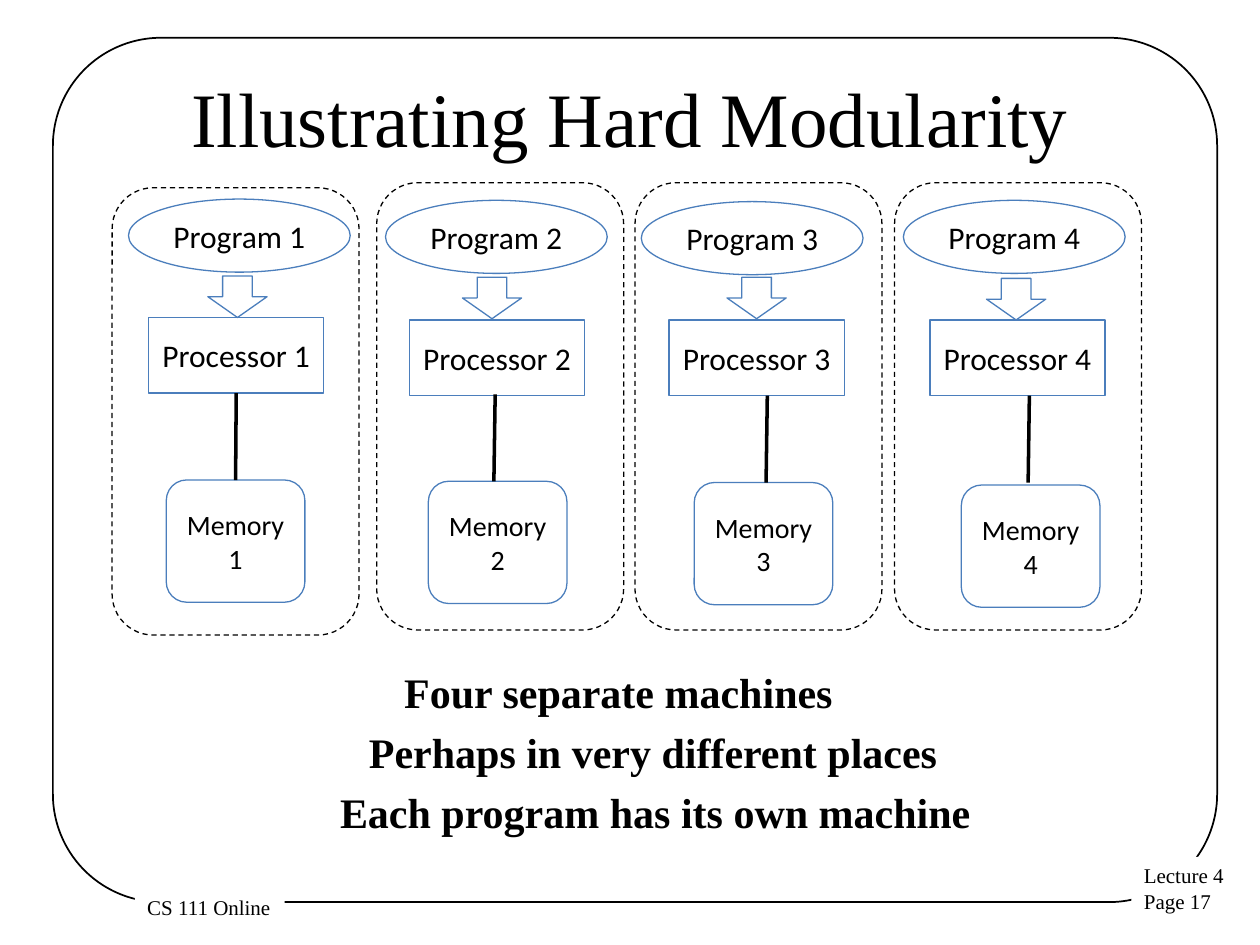
from lxml.etree import SubElement
from pptx import Presentation
from pptx.dml.color import RGBColor
from pptx.enum.dml import MSO_LINE
from pptx.enum.shapes import MSO_CONNECTOR, MSO_SHAPE
from pptx.enum.text import MSO_ANCHOR, MSO_AUTO_SIZE, PP_ALIGN
from pptx.oxml.ns import qn
from pptx.util import Inches, Pt

COLORS = {"ink": "000000", "edge": "4B7EBC", "paper": "FFFFFF"}
SERIF, SANS = "Times New Roman", "Calibri"
COLS, ROWS = 100, 75


def write(frame, text, size=18, font=SANS, bold=False, color="ink",
          align=PP_ALIGN.CENTER, anchor=MSO_ANCHOR.MIDDLE, wrap=True):
    """Fill a text frame, one paragraph for each line of text."""
    frame.word_wrap = wrap
    frame.auto_size = MSO_AUTO_SIZE.NONE if wrap else MSO_AUTO_SIZE.SHAPE_TO_FIT_TEXT
    frame.vertical_anchor = anchor
    for i, line in enumerate(text.split("\n")):
        para = frame.add_paragraph() if i else frame.paragraphs[0]
        para.alignment = align
        run = para.add_run()
        run.text = line
        run.font.size, run.font.name, run.font.bold = Pt(size), font, bold
        run.font.color.rgb = RGBColor.from_string(COLORS[color])


class Deck:
    """Holds the style and the current slide; lengths are grid columns and rows."""

    def __init__(self):
        self.prs = Presentation()
        self.prs.slide_width, self.prs.slide_height = Inches(10), Inches(7.5)
        self.slide = self.prs.slides.add_slide(self.prs.slide_layouts[5])

    def x(self, cols):
        return round(self.prs.slide_width * cols / COLS)

    def y(self, rows):
        return round(self.prs.slide_height * rows / ROWS)

    def area(self, left, top, width, height):
        return self.x(left), self.y(top), self.x(width), self.y(height)

    def title(self, text, *box):
        shape = self.slide.shapes.title
        shape.left, shape.top, shape.width, shape.height = self.area(*box)
        write(shape.text_frame, text, size=44, font=SERIF)

    def shape(self, kind, *box, fill=None, line="edge", weight=0.75,
              dash=None, curve=None):
        shape = self.slide.shapes.add_shape(kind, *self.area(*box))
        shape.shadow.inherit = False
        if fill:
            shape.fill.solid()
            shape.fill.fore_color.rgb = RGBColor.from_string(COLORS[fill])
        else:
            shape.fill.background()
        if line:
            shape.line.color.rgb = RGBColor.from_string(COLORS[line])
            shape.line.width = Pt(weight)
            if dash:
                shape.line.dash_style = dash
        else:
            shape.line.fill.background()
        if curve is not None:
            shape.adjustments[0] = curve
        return shape

    def label(self, text, *box):
        """A white tag that interrupts the frame."""
        tag = self.shape(MSO_SHAPE.RECTANGLE, *box, fill="paper", line=None)
        write(tag.text_frame, text, size=12, font=SERIF, align=PP_ALIGN.LEFT,
              anchor=MSO_ANCHOR.TOP, wrap=False)

    def note(self, text, *box):
        area = self.slide.shapes.add_textbox(*self.area(*box))
        write(area.text_frame, text, size=24, font=SERIF, bold=True,
              align=PP_ALIGN.LEFT, anchor=MSO_ANCHOR.TOP, wrap=False)

    def link(self, left, top, right, bottom):
        line = self.slide.shapes.add_connector(
            MSO_CONNECTOR.STRAIGHT, self.x(left), self.y(top),
            self.x(right), self.y(bottom))
        line.line.color.rgb = RGBColor.from_string(COLORS["ink"])
        line.line.width = Pt(2)
        SubElement(line._element.spPr, qn("a:effectLst"))
        return line


# name, shape, text size, width, height, (left, top) in each machine
PARTS = [
    ("Processor", MSO_SHAPE.RECTANGLE, 18, 13.9, 6,
     [(11.8, 25.2), (32.5, 25.4), (53.1, 25.4), (73.8, 25.4)]),
    ("Program", MSO_SHAPE.OVAL, 18, 17.6, 5.8,
     [(10.2, 15.8), (30.6, 15.9), (50.9, 16), (71.7, 15.9)]),
    ("Memory", MSO_SHAPE.ROUNDED_RECTANGLE, 16, 11, 9.7,
     [(13.2, 38.1), (34, 38.2), (55.1, 38.3), (76.3, 38.5)]),
]
ARROWS = [(16.5, 21.9), (36.7, 22), (57.7, 22), (78.3, 22.1)]
MACHINES = [(8.9, 14.9), (29.9, 14.5), (50.4, 14.5), (71, 14.5)]
WIRES = [(18.8, 31.2), (39.3, 31.3), (60.9, 31.4), (81.7, 31.4)]
NOTES = [("Four separate machines", 31.1, 36.4),
         ("Perhaps in very different places", 28.3, 47.6),
         ("Each program has its own machine", 26, 52.5)]


def main():
    deck = Deck()
    deck.shape(MSO_SHAPE.ROUNDED_RECTANGLE, 4.2, 3, 92.4, 68.6,
               line="ink", weight=1, curve=0.125)
    deck.label("Lecture 4\nPage 17", 89.8, 68, 8.5, 5.1)
    deck.label("CS 111 Online", 10.7, 70.5, 11.9, 3)
    deck.title("Illustrating Hard Modularity", 5, 3, 90, 12.5)

    parts = {}
    for name, kind, size, width, height, spots in PARTS:
        for num, spot in enumerate(spots, 1):
            part = deck.shape(kind, *spot, width, height)
            write(part.text_frame, f"{name} {num}", size=size)
            parts[name, num] = part
    for spot in ARROWS:
        deck.shape(MSO_SHAPE.DOWN_ARROW, *spot, 4.7, 3.3, fill="paper")
    for spot in MACHINES:
        deck.shape(MSO_SHAPE.ROUNDED_RECTANGLE, *spot, 19.6, 35.5,
                   line="ink", dash=MSO_LINE.DASH)
    for row, (text, left, width) in enumerate(NOTES):
        deck.note(text, left, 52.4 + 4.75 * row, width, 5)
    wires = [deck.link(x, y, x - 0.1, y + 6.9) for x, y in WIRES]
    # Only the first wire meets the middle of both sides.
    wires[0].begin_connect(parts["Processor", 1], 2)
    wires[0].end_connect(parts["Memory", 1], 0)

    deck.prs.save("out.pptx")


if __name__ == "__main__":
    main()
